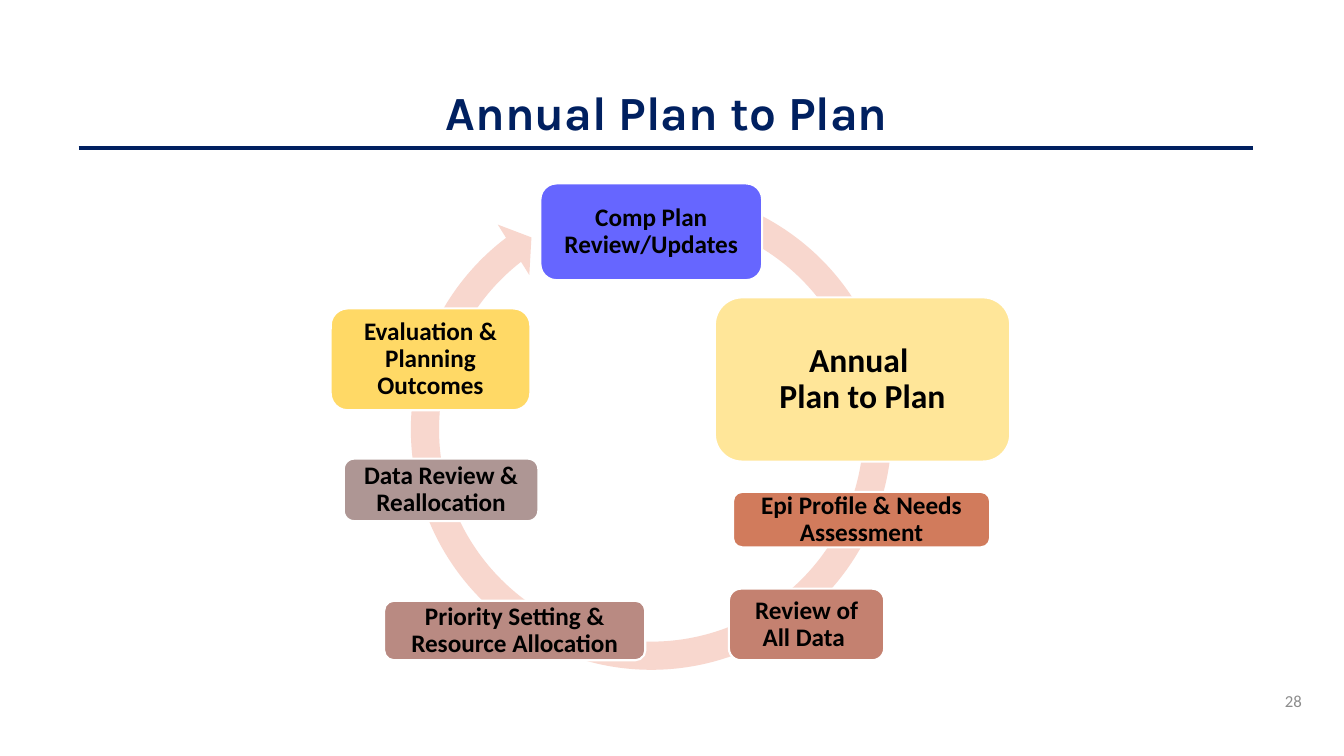
import pptx
import pptx.util
import pptx.dml.color
import pptx.enum.shapes
import pptx.enum.text
import pptx.oxml

Inches = pptx.util.Inches
Pt = pptx.util.Pt
RGBColor = pptx.dml.color.RGBColor
SHAPE = pptx.enum.shapes.MSO_SHAPE
ALIGN = pptx.enum.text.PP_ALIGN
MIDDLE = pptx.enum.text.MSO_ANCHOR.MIDDLE

NAVY = RGBColor(0x00, 0x20, 0x60)
GRAY = RGBColor(0x8C, 0x8C, 0x8C)
BLACK = RGBColor(0x00, 0x00, 0x00)
WHITE = RGBColor(0xFF, 0xFF, 0xFF)
PEACH = RGBColor(0xF8, 0xD7, 0xCE)
VIOLET = RGBColor(0x66, 0x66, 0xFF)
CREAM = RGBColor(0xFF, 0xE6, 0x99)
ORANGE = RGBColor(0xD1, 0x7B, 0x5C)
CLAY = RGBColor(0xC4, 0x81, 0x70)
ROSE = RGBColor(0xB9, 0x8A, 0x82)
MAUVE = RGBColor(0xAE, 0x96, 0x94)
GOLD = RGBColor(0xFF, 0xD9, 0x66)

STEPS = [
    ("Comp Plan Review/Updates", (5.36, 1.82, 2.2, 0.96), VIOLET, 18),
    ("Annual \nPlan to Plan", (7.09, 2.95, 2.93, 1.63), CREAM, 24),
    ("Epi Profile & Needs\nAssessment", (7.27, 4.88, 2.55, 0.55), ORANGE, 18),
    ("Review of All Data ", (7.23, 5.84, 1.54, 0.71), CLAY, 18),
    ("Priority Setting & Resource Allocation", (3.81, 5.96, 2.59, 0.59), ROSE, 18),
    ("Data Review & Reallocation", (3.41, 4.55, 1.93, 0.62), MAUVE, 18),
    ("Evaluation & Planning Outcomes", (3.28, 3.06, 1.98, 1.01), GOLD, 18),
]


def set_text(tf, text, size, font, color, bold=True, align=ALIGN.CENTER, spacing=0.9):
    tf.text = text
    tf.word_wrap = True
    tf.vertical_anchor = MIDDLE
    for p in tf.paragraphs:
        p.alignment = align
        p.line_spacing = spacing
        for r in p.runs:
            r.font.size = Pt(size)
            r.font.name = font
            r.font.bold = bold
            r.font.color.rgb = color


def add_label(s, box, text, *style, **options):
    tb = s.shapes.add_textbox(*map(Inches, box))
    set_text(tb.text_frame, text, *style, **options)


def add_cycle_arrow(s):
    sp = s.shapes.add_shape(SHAPE.CIRCULAR_ARROW, *map(Inches, (3.92, 1.72, 5.08, 5.08)))
    sp.shadow.inherit = False
    for i, value in enumerate((0.055, 3.307, 139.508, 172.804, 0.058)):
        sp.adjustments[i] = value
    sp.fill.solid()
    sp.fill.fore_color.rgb = PEACH
    sp.line.fill.background()


def add_step(s, text, box, color, size):
    sp = s.shapes.add_shape(SHAPE.ROUNDED_RECTANGLE, *map(Inches, box))
    sp.shadow.inherit = False
    sp.fill.solid()
    sp.fill.fore_color.rgb = color
    sp.line.color.rgb = WHITE
    sp.line.width = Pt(1.5)
    tf = sp.text_frame
    tf.margin_left = tf.margin_right = Inches(0.1)
    tf.margin_top = tf.margin_bottom = Inches(0)
    set_text(tf, text, size, "Calibri", BLACK)


def add_rule(s):
    line = s.shapes.add_connector(
        pptx.enum.shapes.MSO_CONNECTOR.STRAIGHT,
        Inches(0.78), Inches(1.47), Inches(12.43), Inches(1.47))
    line.line.color.rgb = NAVY
    line.line.width = Pt(2.5)
    sp_pr = line._element.spPr
    sp_pr.append(sp_pr.makeelement(pptx.oxml.ns.qn("a:effectLst"), {}))


def main():
    prs = pptx.Presentation()
    prs.slide_width = Inches(13.33)
    prs.slide_height = Inches(7.5)
    s = prs.slides.add_slide(prs.slide_layouts[6])
    add_label(s, (0.8, 0.42, 11.63, 1.45), "Annual Plan to Plan", 34, "Karla", NAVY)
    add_label(s, (12.43, 6.75, 0.58, 0.4), "28", 12, "Calibri", GRAY,
              bold=False, align=ALIGN.RIGHT, spacing=1.0)
    add_cycle_arrow(s)
    for step in STEPS:
        add_step(s, *step)
    add_rule(s)
    prs.save("out.pptx")


if __name__ == "__main__":
    main()
